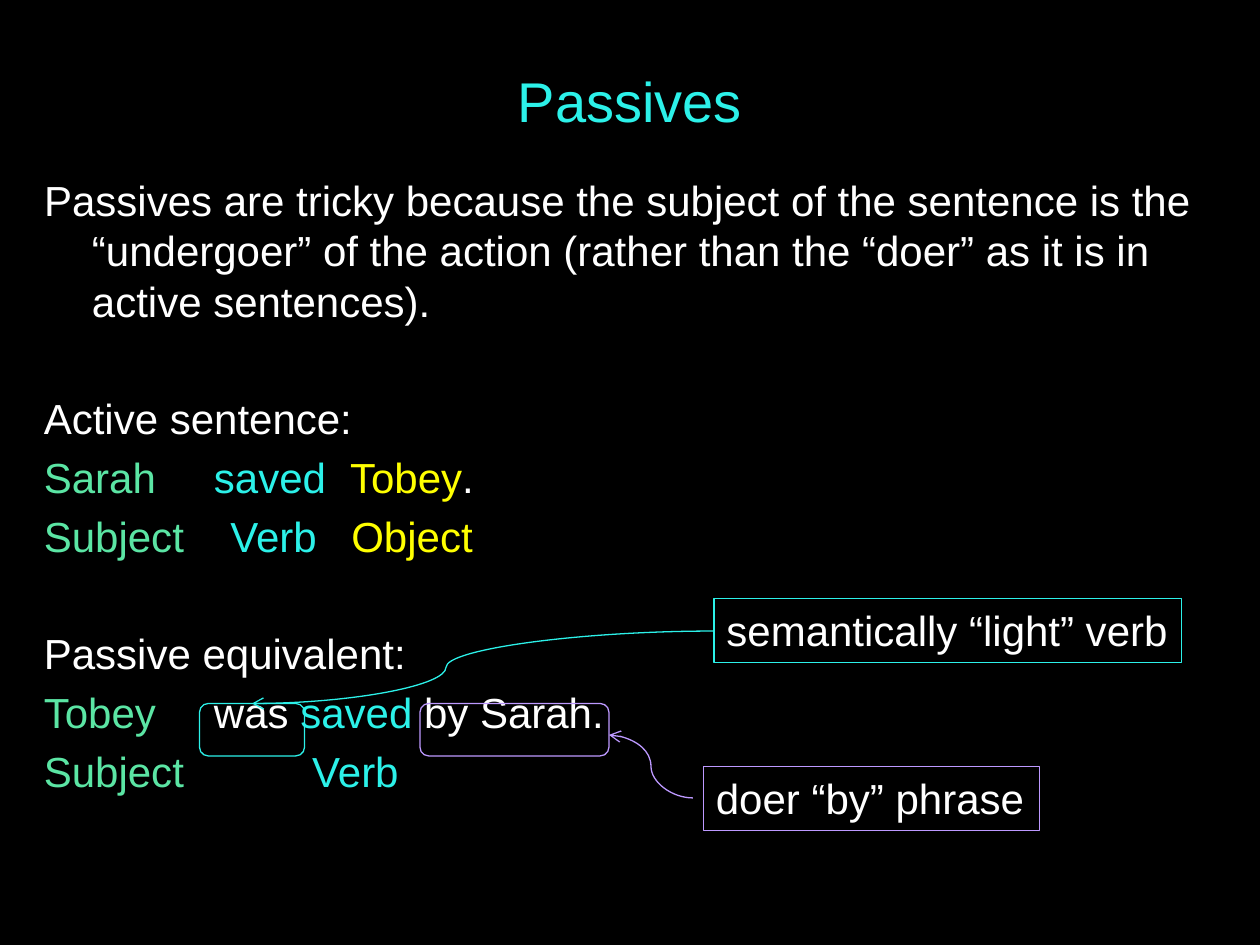
from lxml.etree import SubElement
from pptx import Presentation
from pptx.dml.color import RGBColor
from pptx.enum.shapes import MSO_CONNECTOR, MSO_SHAPE
from pptx.enum.text import MSO_ANCHOR, MSO_AUTO_SIZE, PP_ALIGN
from pptx.oxml.ns import qn
from pptx.util import Inches, Pt

COLORS = {
    "black": "000000",
    "white": "FFFFFF",
    "cyan": "2CF1E9",
    "green": "5BE5A4",
    "yellow": "FFFF00",
    "violet": "BD99FF",
}
FONT = "Arial"
COLS, ROWS = 120, 90
LINE_PT = 28.8
GAP_PT = 4.8
SECTION_GAP_PT = LINE_PT + 2 * GAP_PT
HANGING = 0.38

INTRO = ("Passives are tricky because the subject of the sentence is the "
         "“undergoer” of the action (rather than the “doer” as it is in "
         "active sentences).")
EXAMPLES = [
    ([("Active sentence:", "white")], [], GAP_PT),
    ([("Sarah\t", "green"), ("saved\t", "cyan"), ("Tobey", "yellow"),
      (".", "white")], [1.35, 2.43], GAP_PT),
    ([("Subject\t", "green"), ("Verb\t", "cyan"), ("Object", "yellow")],
     [1.48, 2.44], GAP_PT),
    ([("Passive equivalent:", "white")], [], SECTION_GAP_PT),
    ([("Tobey\t", "green"), ("was", "white"), (" saved ", "cyan"),
      ("by Sarah.", "white")], [1.35], GAP_PT),
    ([("Subject\t", "green"), ("Verb", "cyan")], [2.13], GAP_PT),
]


def rgb(name):
    return RGBColor.from_string(COLORS[name])


def grid(*cells):
    return [Inches(cell * 10 / COLS) for cell in cells]


def place(sp, *cells):
    sp.left, sp.top, sp.width, sp.height = grid(*cells)


def style_run(r, color, size=24):
    r.font.name = FONT
    r.font.size = Pt(size)
    r.font.color.rgb = rgb(color)


def style_line(sp, color):
    sp.line.color.rgb = rgb(color)
    sp.line.width = Pt(0.75)


def set_title(s, text):
    sp = s.shapes.title
    place(sp, 9, 2, 102, 15)
    tf = sp.text_frame
    tf.text = text
    tf.vertical_anchor = MSO_ANCHOR.MIDDLE
    tf.paragraphs[0].alignment = PP_ALIGN.CENTER
    style_run(tf.paragraphs[0].runs[0], "cyan", 32)


def write_paragraph(p, runs, before):
    p.space_before = Pt(before)
    p.line_spacing = Pt(LINE_PT)
    for text, color in runs:
        r = p.add_run()
        r.text = text
        style_run(r, color)


def set_body(s, text):
    sp = s.placeholders[1]
    place(sp, 3, 16, 113, 20)
    tf = sp.text_frame
    tf.auto_size = MSO_AUTO_SIZE.NONE
    p = tf.paragraphs[0]
    write_paragraph(p, [(text, "white")], GAP_PT)
    pPr = p._p.get_or_add_pPr()
    pPr.set("marL", str(Inches(HANGING)))
    pPr.set("indent", str(-Inches(HANGING)))
    SubElement(pPr, qn("a:buNone"))


def add_examples(s, examples, *cells):
    tf = s.shapes.add_textbox(*grid(*cells)).text_frame
    tf.word_wrap = True
    for i, (runs, tabs, before) in enumerate(examples):
        p = tf.add_paragraph() if i else tf.paragraphs[0]
        write_paragraph(p, runs, before)
        if tabs:
            tab_list = SubElement(p._p.get_or_add_pPr(), qn("a:tabLst"))
            for pos in tabs:
                SubElement(tab_list, qn("a:tab"), pos=str(Inches(pos)), algn="l")


def add_label(s, text, color, *cells):
    sp = s.shapes.add_textbox(*grid(*cells))
    style_line(sp, color)
    tf = sp.text_frame
    tf.word_wrap = False
    tf.auto_size = MSO_AUTO_SIZE.SHAPE_TO_FIT_TEXT
    tf.text = text
    style_run(tf.paragraphs[0].runs[0], "white")


def add_word_frame(s, color, *cells):
    sp = s.shapes.add_shape(MSO_SHAPE.ROUNDED_RECTANGLE, *grid(*cells))
    sp.shadow.inherit = False
    sp.fill.background()
    style_line(sp, color)


def add_curved_arrow(s, color, bend, *cells):
    cxn = s.shapes.add_connector(MSO_CONNECTOR.CURVE, *grid(*cells))
    style_line(cxn, color)
    SubElement(cxn.line._get_or_add_ln(), qn("a:tailEnd"), type="arrow")
    spPr = cxn._element.spPr
    SubElement(spPr, qn("a:effectLst"))
    guides = spPr.find(qn("a:prstGeom")).get_or_add_avLst()
    SubElement(guides, qn("a:gd"), name="adj1", fmla=f"val {round(bend * 100000)}")


def main():
    prs = Presentation()
    prs.slide_width, prs.slide_height = grid(COLS, ROWS)
    s = prs.slides.add_slide(prs.slide_layouts[1])
    s.background.fill.solid()
    s.background.fill.fore_color.rgb = rgb("black")

    set_title(s, "Passives")
    set_body(s, INTRO)
    add_examples(s, EXAMPLES, 3, 36.8, 113, 42)
    add_label(s, "semantically “light” verb", "cyan", 68, 57, 44.5, 6.1)
    add_word_frame(s, "cyan", 19, 67, 10, 5)
    add_curved_arrow(s, "cyan", 0.58, 68, 60.1, 24, 67)
    add_label(s, "doer “by” phrase", "violet", 67, 73, 32, 6.1)
    add_word_frame(s, "violet", 40, 67, 18, 5)
    add_curved_arrow(s, "violet", 0.5, 66, 76, 58, 70)
    prs.save("out.pptx")


if __name__ == "__main__":
    main()
